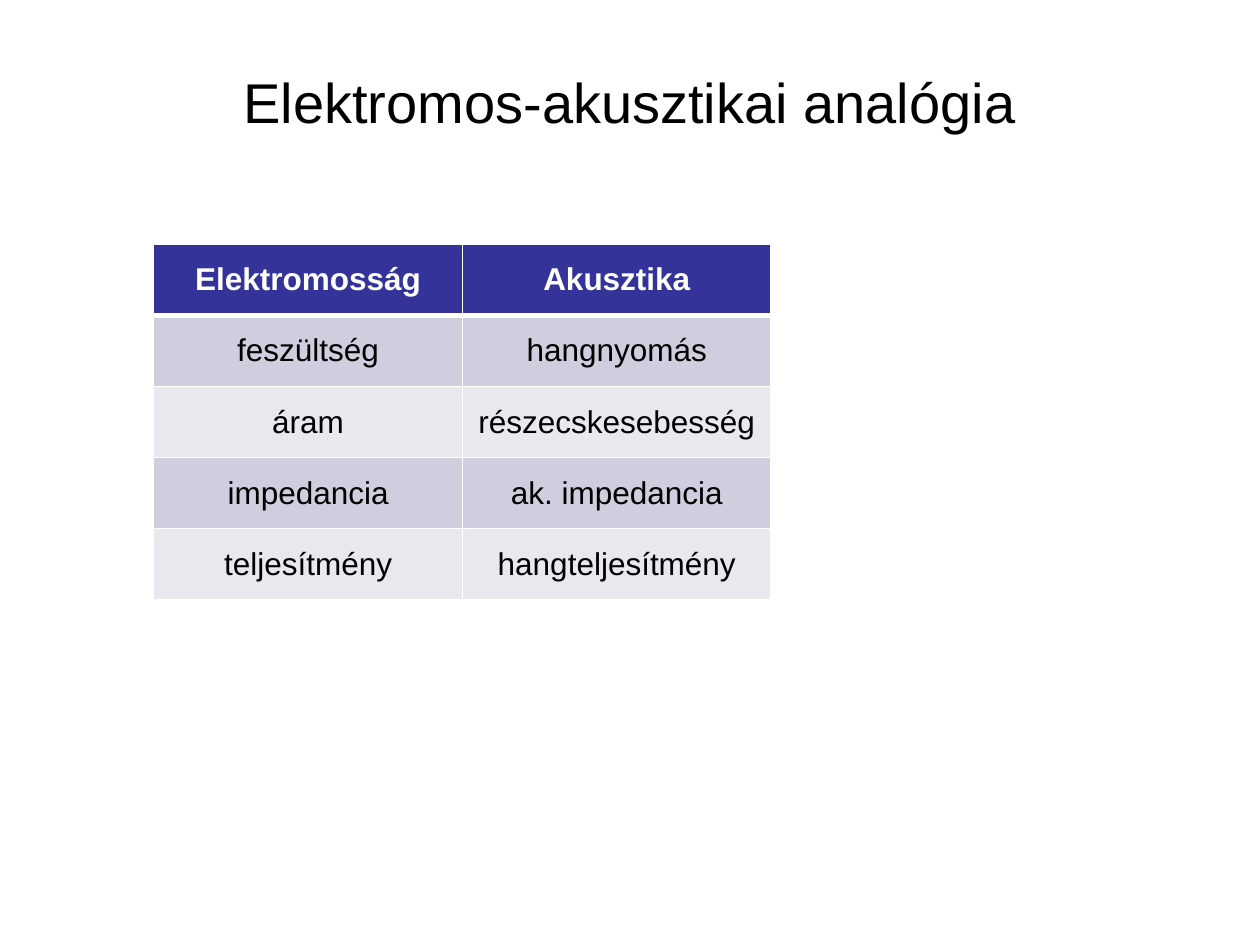
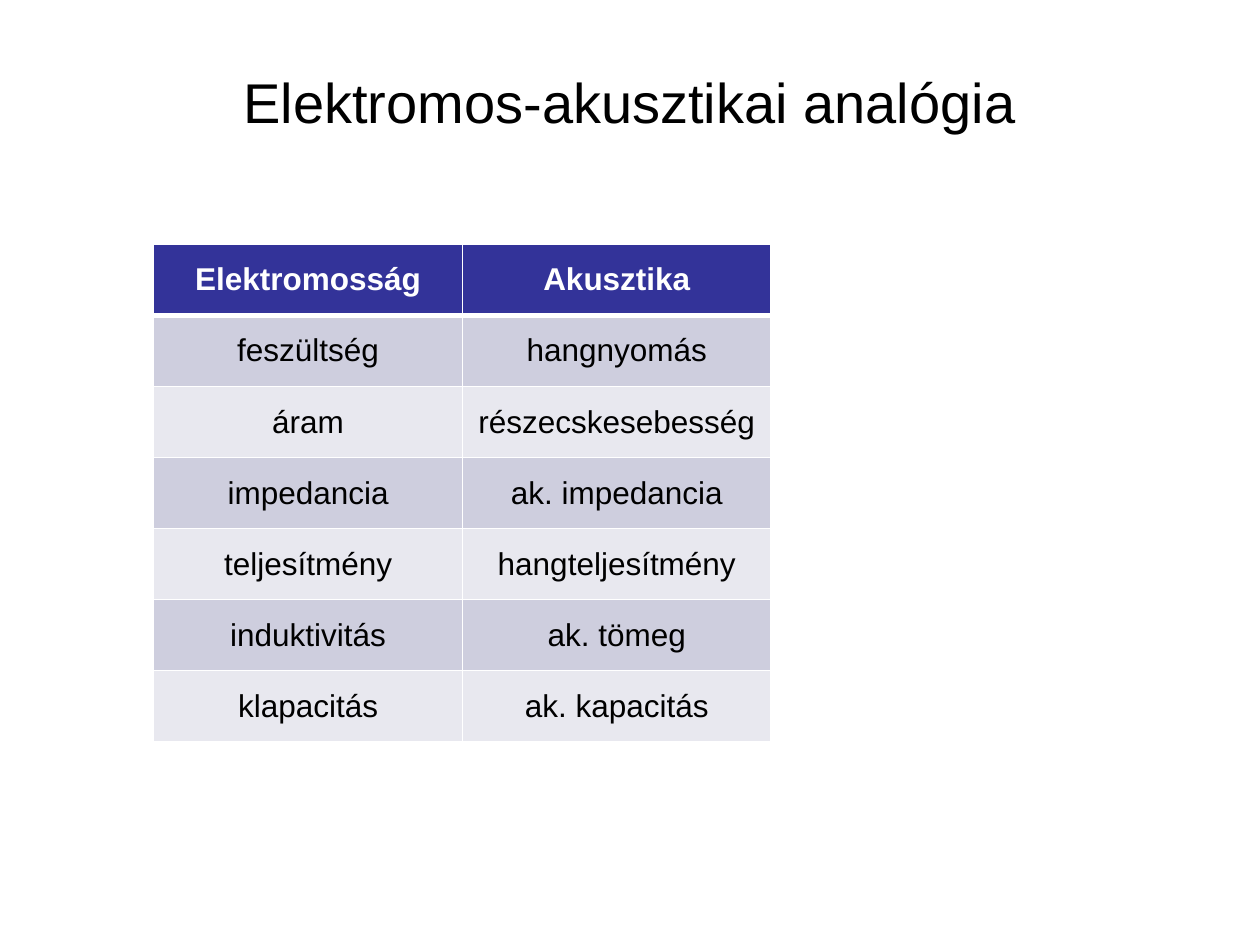
from dataclasses import dataclass

from lxml import etree
from pptx import Presentation
from pptx.dml.color import RGBColor
from pptx.enum.text import MSO_ANCHOR, PP_ALIGN
from pptx.oxml.ns import qn
from pptx.slide import Slide
from pptx.table import _Cell
from pptx.text.text import TextFrame
from pptx.util import Inches, Pt

CENTER = PP_ALIGN.CENTER
MIDDLE = MSO_ANCHOR.MIDDLE

FONT = "Arial"
BLACK = "000000"
WHITE = "FFFFFF"
HEADER_FILL = "333399"
BAND_FILLS = ("CECEDE", "E8E8EF")

TITLE = "Elektromos-akusztikai analógia"
COLUMN_WIDTH = Inches(2.45)
ROW_HEIGHT = Inches(2.82 / 5)
THIN, THICK = 1, 3


@dataclass(frozen=True)
class Analogy:
    electric: str
    acoustic: str


HEADER = Analogy("Elektromosság", "Akusztika")
BASIC = [
    Analogy("feszültség", "hangnyomás"),
    Analogy("áram", "részecskesebesség"),
    Analogy("impedancia", "ak. impedancia"),
    Analogy("teljesítmény", "hangteljesítmény"),
]
ELEMENTS = [
    Analogy("induktivitás", "ak. tömeg"),
    Analogy("klapacitás", "ak. kapacitás"),
]


def rgb(color: str) -> RGBColor:
    return RGBColor.from_string(color)


def write(tf: TextFrame, text: str, size: int, color: str, bold: bool = False) -> None:
    p = tf.paragraphs[0]
    p.alignment = CENTER
    r = p.add_run()
    r.text = text
    r.font.name = FONT
    r.font.size = Pt(size)
    r.font.bold = bold
    r.font.color.rgb = rgb(color)


def add_title(s: Slide) -> None:
    box = s.shapes.add_textbox(Inches(0.5), Inches(0.3), Inches(9), Inches(1.01))
    tf = box.text_frame
    tf.word_wrap = True
    tf.vertical_anchor = MIDDLE
    write(tf, TITLE, 32, BLACK)


def set_borders(cell: _Cell, top: int, bottom: int) -> None:
    tc_pr = cell._tc.get_or_add_tcPr()
    for side, width in (("L", THIN), ("R", THIN), ("T", top), ("B", bottom)):
        ln = etree.SubElement(tc_pr, qn(f"a:ln{side}"), w=str(Pt(width)))
        fill = etree.SubElement(ln, qn("a:solidFill"))
        etree.SubElement(fill, qn("a:srgbClr"), val=WHITE)


def add_analogy_table(s: Slide, analogies: list[Analogy]) -> None:
    rows = [HEADER, *analogies]
    frame = s.shapes.add_table(
        len(rows), 2, Inches(1.22), Inches(1.94),
        2 * COLUMN_WIDTH, len(rows) * ROW_HEIGHT,
    )
    table = frame.table
    for column in table.columns:
        column.width = COLUMN_WIDTH
    for i, analogy in enumerate(rows):
        table.rows[i].height = ROW_HEIGHT
        is_header = i == 0
        fill = HEADER_FILL if is_header else BAND_FILLS[(i - 1) % 2]
        for j, text in enumerate((analogy.electric, analogy.acoustic)):
            cell = table.cell(i, j)
            cell.vertical_anchor = MIDDLE
            set_borders(cell, THICK if i == 1 else THIN, THICK if is_header else THIN)
            cell.fill.solid()
            cell.fill.fore_color.rgb = rgb(fill)
            write(cell.text_frame, text, 18, WHITE if is_header else BLACK, is_header)


def main() -> None:
    prs = Presentation()
    prs.slide_width = Inches(10)
    prs.slide_height = Inches(7.5)
    for analogies in (BASIC, BASIC + ELEMENTS):
        s = prs.slides.add_slide(prs.slide_layouts[6])
        add_title(s)
        add_analogy_table(s, analogies)
    prs.save("out.pptx")


if __name__ == "__main__":
    main()
